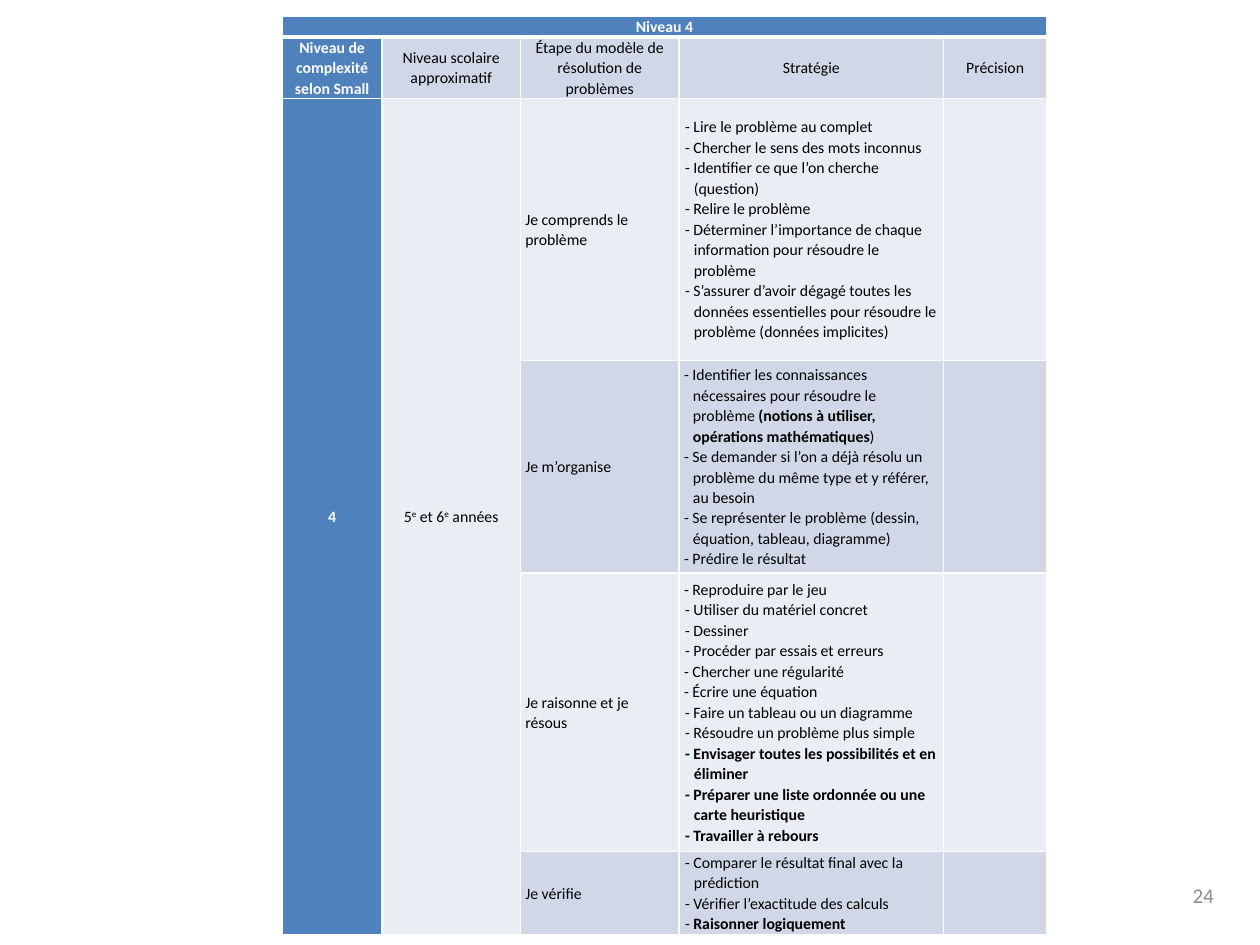
from dataclasses import dataclass

from lxml.etree import SubElement
from pptx import Presentation
from pptx.dml.color import RGBColor
from pptx.enum.text import MSO_ANCHOR as Anchor, PP_ALIGN as Align
from pptx.oxml.ns import qn
from pptx.util import Cm, Pt


@dataclass(frozen=True)
class Theme:
    font: str = "Calibri"
    body_size: int = 9
    number_size: int = 12
    white: str = "FFFFFF"
    black: str = "000000"
    grey: str = "8C8C8C"
    blue: str = "4F81BD"
    dark_band: str = "D0D8E8"
    light_band: str = "E9EDF4"


theme = Theme()


def write(paragraph, text, color, size=theme.body_size, bold=False):
    """Write text as runs: * toggles bold and ^ toggles superscript."""
    raised = False
    for part in text.replace("*", "\n*\n").replace("^", "\n^\n").split("\n"):
        if part == "*":
            bold = not bold
        elif part == "^":
            raised = not raised
        elif part:
            run = paragraph.add_run()
            run.text = part
            run.font.name = theme.font
            run.font.size = Pt(size)
            run.font.bold = bold
            run.font.color.rgb = RGBColor.from_string(color)
            if raised:
                run.font._element.set("baseline", "30000")


def style_cell(cell, fill, bottom_width=1):
    cell.margin_left = cell.margin_right = Cm(0.1)
    cell.margin_top = cell.margin_bottom = 0
    cell.vertical_anchor = Anchor.MIDDLE
    properties = cell._tc.get_or_add_tcPr()
    for side, width in (("L", 1), ("R", 1), ("T", 1), ("B", bottom_width)):
        line = SubElement(properties, qn(f"a:ln{side}"), w=str(Pt(width)))
        solid = SubElement(line, qn("a:solidFill"))
        SubElement(solid, qn("a:srgbClr"), val=theme.white)
    cell.fill.solid()
    cell.fill.fore_color.rgb = RGBColor.from_string(fill)


title = "Niveau 4"
headings = [
    "Niveau de complexité selon Small",
    "Niveau scolaire approximatif",
    "Étape du modèle de résolution de problèmes",
    "Stratégie",
    "Précision",
]
level = "4"
grades = "5^e^ et 6^e^ années"
# Each step: name, then strategies as (hanging indent in cm, text)
steps = [
    ("Je comprends le problème", [
        (0.2, "- Lire le problème au complet"),
        (0.2, "- Chercher le sens des mots inconnus"),
        (0.2, "- Identifier ce que l’on cherche (question)"),
        (0.2, "- Relire le problème"),
        (0.2, "- Déterminer l’importance de chaque information pour résoudre le problème"),
        (0.2, "- S’assurer d’avoir dégagé toutes les données essentielles pour "
              "résoudre le problème (données implicites)"),
    ]),
    ("Je m’organise", [
        (0.18, "- Identifier les connaissances nécessaires pour résoudre le problème "
               "*(notions à utiliser, opérations mathématiques*)"),
        (0.18, "- Se demander si l’on a déjà résolu un problème du même type et y "
               "référer, au besoin"),
        (0.18, "- Se représenter le problème (dessin, équation, tableau, diagramme)"),
        (0.18, "- Prédire le résultat"),
    ]),
    ("Je raisonne et je résous", [
        (0, "- Reproduire par le jeu"),
        (0.2, "- Utiliser du matériel concret"),
        (0.2, "- Dessiner"),
        (0.2, "- Procéder par essais et erreurs"),
        (0, "- Chercher une régularité"),
        (0, "- Écrire une équation"),
        (0.2, "- Faire un tableau ou un diagramme"),
        (0.2, "- Résoudre un problème plus simple"),
        (0.2, "*- Envisager toutes les possibilités et en éliminer*"),
        (0.2, "*- Préparer une liste ordonnée ou une carte heuristique*"),
        (0.2, "*- Travailler à rebours*"),
    ]),
    ("Je vérifie", [
        (0.2, "- Comparer le résultat final avec la prédiction"),
        (0.2, "- Vérifier l’exactitude des calculs"),
        (0.2, "- *Raisonner logiquement*"),
    ]),
]
column_widths = [2.01, 2.79, 3.2, 5.33, 2.08]
row_heights = [0.38, 1.02, 5.28, 4.29, 5.61, 1.68]

presentation = Presentation()
presentation.slide_width, presentation.slide_height = Cm(25.4), Cm(19.05)
slide = presentation.slides.add_slide(presentation.slide_layouts[6])

table = slide.shapes.add_table(
    len(row_heights), len(column_widths), Cm(5.69), Cm(0.33),
    Cm(sum(column_widths)), Cm(sum(row_heights)),
).table
table.first_row = table.horz_banding = False
for column, width in zip(table.columns, column_widths):
    column.width = Cm(width)
for row, height in zip(table.rows, row_heights):
    row.height = Cm(height)

table.cell(0, 0).merge(table.cell(0, 4))
for column in (0, 1):
    table.cell(2, column).merge(table.cell(5, column))

for row in range(len(row_heights)):
    for column in range(len(column_widths)):
        if row == 0 or column == 0:
            fill = theme.blue
        elif column == 1 and row > 1 or row % 2 == 0:
            fill = theme.light_band
        else:
            fill = theme.dark_band
        style_cell(table.cell(row, column), fill, 3 if row == 0 else 1)

centred = [(0, 0, title), (2, 0, level), (2, 1, grades)]
centred += [(1, column, heading) for column, heading in enumerate(headings)]
for row, column, text in centred:
    paragraph = table.cell(row, column).text_frame.paragraphs[0]
    paragraph.alignment = Align.CENTER
    paragraph.line_spacing = 1.07
    write(paragraph, text, theme.black if column else theme.white, bold=column == 0)

for row, (step, strategies) in enumerate(steps, start=2):
    paragraph = table.cell(row, 2).text_frame.paragraphs[0]
    paragraph.line_spacing = 1.07
    write(paragraph, step, theme.black)
    text_frame = table.cell(row, 3).text_frame
    for index, (indent, strategy) in enumerate(strategies):
        paragraph = text_frame.add_paragraph() if index else text_frame.paragraphs[0]
        paragraph.line_spacing = 1.07
        if indent:
            properties = paragraph._p.get_or_add_pPr()
            properties.set("marL", str(Cm(indent)))
            properties.set("indent", str(-Cm(0.18)))
        write(paragraph, strategy, theme.black)

number_box = slide.shapes.add_textbox(Cm(23.09), Cm(17.53), Cm(1.63), Cm(1.02))
number_box.text_frame.word_wrap = True
number_box.text_frame.vertical_anchor = Anchor.MIDDLE
paragraph = number_box.text_frame.paragraphs[0]
paragraph.alignment = Align.RIGHT
write(paragraph, "24", theme.grey, size=theme.number_size)

presentation.save("out.pptx")
